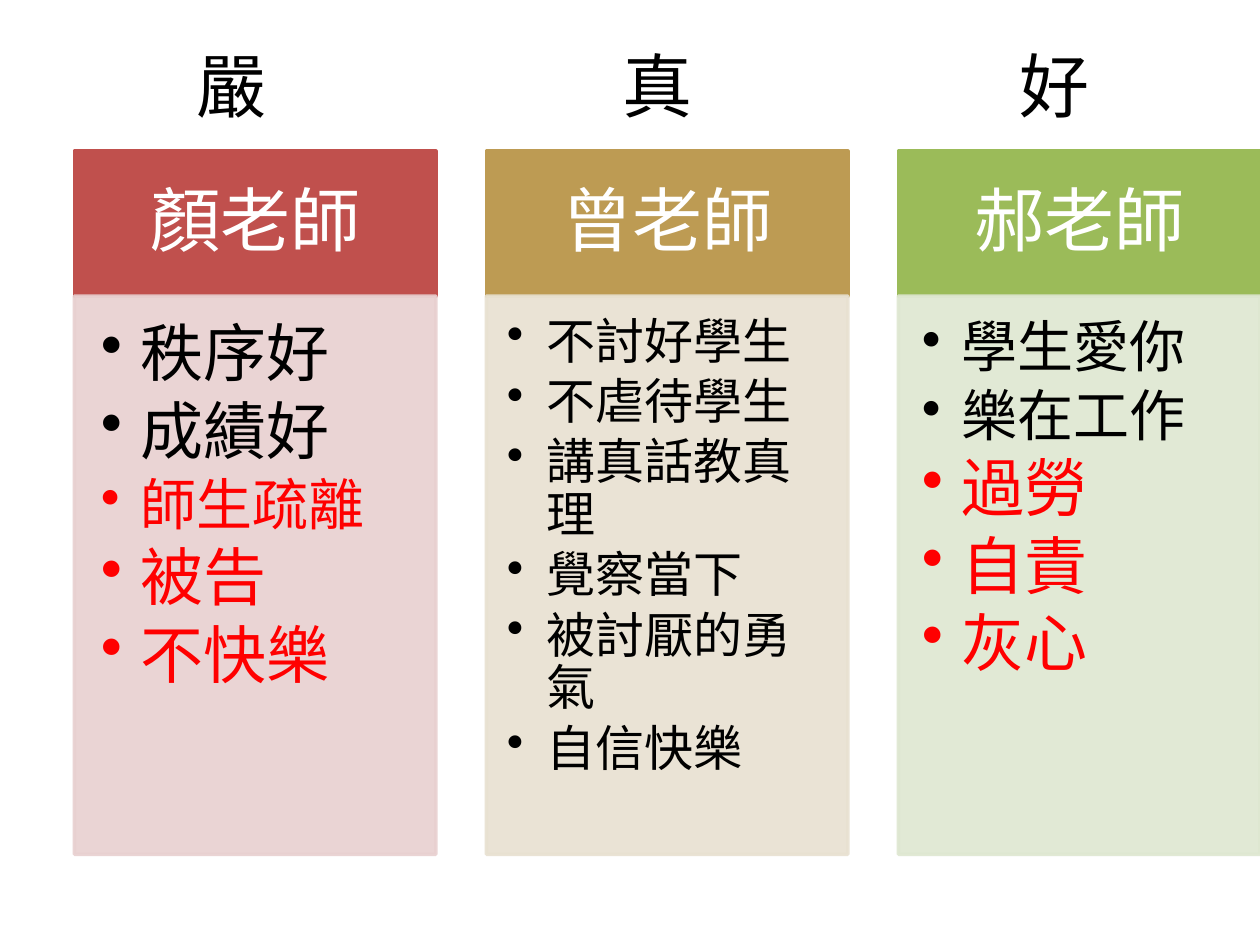
from lxml.etree import SubElement
from pptx import Presentation
from pptx.dml.color import RGBColor
from pptx.enum.shapes import MSO_SHAPE
from pptx.enum.text import MSO_ANCHOR, PP_ALIGN
from pptx.oxml.ns import qn
from pptx.util import Pt

FACE = "Noto Sans CJK SC"
BLACK, WHITE, RED = "000000", "FFFFFF", "FF0000"
LEFT, STEP, WIDTH = 42.5, 235.45, 206.6
HEAD_TOP, HEAD_TALL = 86.4, 82.8
BODY_TOP, BODY_TALL = HEAD_TOP + HEAD_TALL, 319

# label, label left, teacher, head colour, body colour, points (text, size, colour)
COLUMNS = [
    ("嚴", 105, "顏老師", "C0504D", "E8D0D0",
     [("秩序好", 36, BLACK), ("成績好", 36, BLACK), ("師生疏離", 32, RED),
      ("被告", 36, RED), ("不快樂", 36, RED)]),
    ("真", 348.5, "曾老師", "BD9B53", "E8E1D1",
     [(text, 28, BLACK) for text in
      ("不討好學生", "不虐待學生", "講真話教真理", "覺察當下", "被討厭的勇氣", "自信快樂")]),
    ("好", 575.3, "郝老師", "9BBB59", "DEE7D1",
     [("學生愛你", 32, BLACK), ("樂在工作", 32, BLACK), ("過勞", 36, RED),
      ("自責", 36, RED), ("灰心", 36, RED)]),
]


def paint(color, code):
    color.rgb = RGBColor.from_string(code)


def apply(target, values):
    for name, value in values.items():
        setattr(target, name, value)


def set_frame(frame, anchor, left, top, right, bottom):
    apply(frame, {
        "word_wrap": True, "vertical_anchor": anchor,
        "margin_left": Pt(left), "margin_top": Pt(top),
        "margin_right": Pt(right), "margin_bottom": Pt(bottom)})


def write(para, text, size, code):
    run = para.add_run()
    run.text = text
    apply(run.font, {"name": FACE, "size": Pt(size)})
    paint(run.font.color, code)
    SubElement(run.font._element, qn("a:ea"), typeface=FACE)


def add_bullet(para):
    props = para._p.get_or_add_pPr()
    props.set("marL", str(Pt(22.5)))
    props.set("indent", str(-Pt(22.5)))
    SubElement(props, qn("a:buChar"), char="•")


def add_panel(slide, left, top, tall, code):
    panel = slide.shapes.add_shape(
        MSO_SHAPE.RECTANGLE, Pt(left), Pt(top), Pt(WIDTH), Pt(tall))
    panel.shadow.inherit = False
    panel.fill.solid()
    paint(panel.fill.fore_color, code)
    paint(panel.line.color, code)
    panel.line.width = Pt(2)
    return panel


def add_label(slide, left, text):
    box = slide.shapes.add_textbox(Pt(left), Pt(21), Pt(34), Pt(55.5))
    box.text_frame.word_wrap = True
    write(box.text_frame.paragraphs[0], text, 40, BLACK)


def add_head(slide, left, text, code):
    frame = add_panel(slide, left, HEAD_TOP, HEAD_TALL, code).text_frame
    set_frame(frame, MSO_ANCHOR.MIDDLE, 22.4, 12.8, 22.4, 12.8)
    para = frame.paragraphs[0]
    apply(para, {"alignment": PP_ALIGN.CENTER, "line_spacing": 0.9,
                 "space_after": Pt(14)})
    write(para, text, 40, WHITE)


def add_body(slide, left, code, points):
    """Add a slightly clear panel whose margins grow with its first text size."""
    panel = add_panel(slide, left, BODY_TOP, BODY_TALL, code)
    for color in panel._element.spPr.iter(qn("a:srgbClr")):
        SubElement(color, qn("a:alpha"), val="90000")
    frame, base = panel.text_frame, points[0][1]
    set_frame(frame, MSO_ANCHOR.TOP, *(base * k for k in (0.42, 0.42, 0.56, 0.64)))
    for i, (text, size, tint) in enumerate(points):
        para = frame.add_paragraph() if i else frame.paragraphs[0]
        add_bullet(para)
        apply(para, {"level": 1, "alignment": PP_ALIGN.LEFT, "line_spacing": 0.9,
                     "space_after": Pt(size * 0.15)})
        write(para, text, size, tint)


def main():
    deck = Presentation()
    apply(deck, {"slide_width": Pt(720), "slide_height": Pt(540)})
    slide = deck.slides.add_slide(deck.slide_layouts[6])
    for i, (label, spot, teacher, dark, light, points) in enumerate(COLUMNS):
        left = LEFT + i * STEP
        add_head(slide, left, teacher, dark)
        add_body(slide, left, light, points)
        add_label(slide, spot, label)
    deck.save("out.pptx")


if __name__ == "__main__":
    main()
